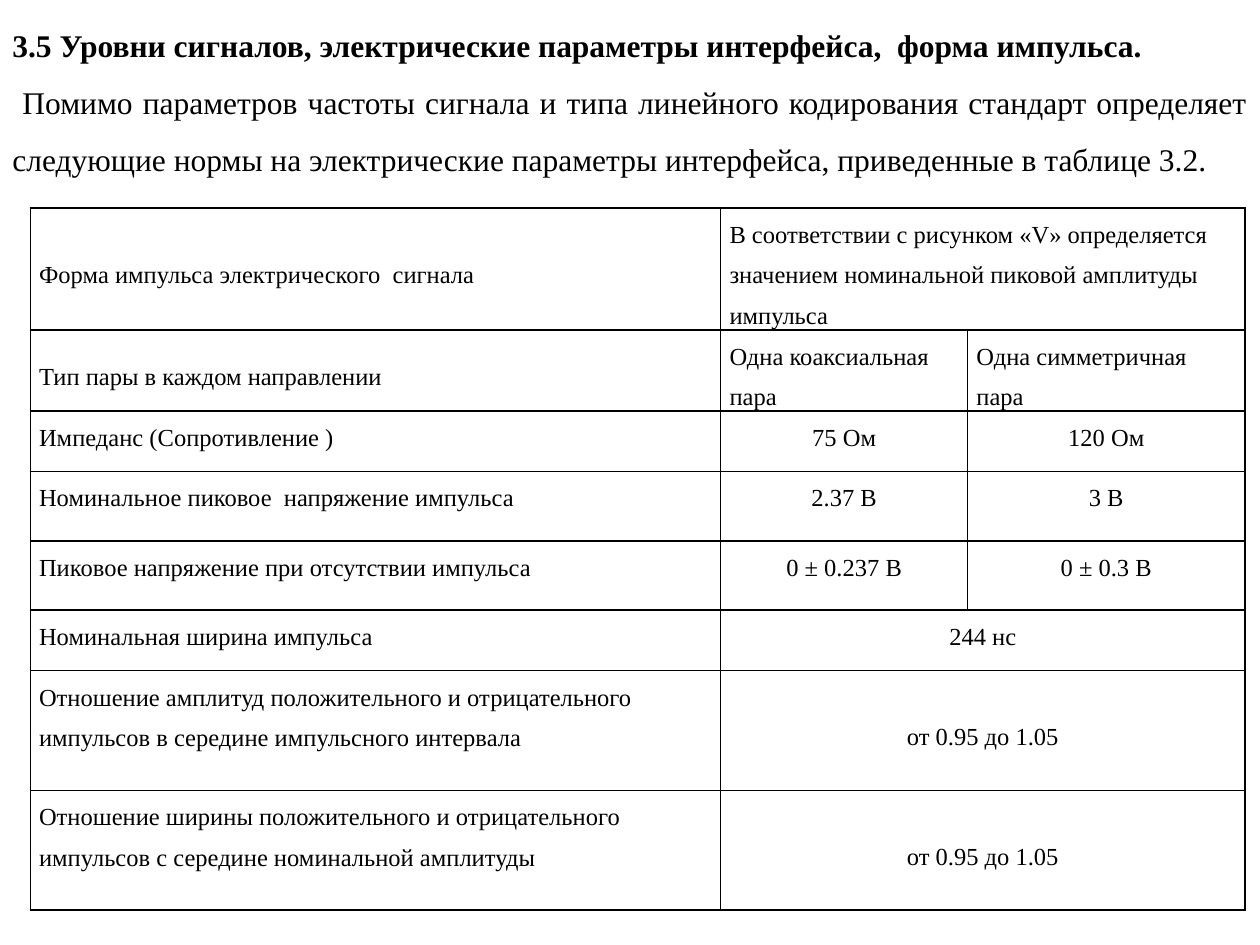
from dataclasses import dataclass

from lxml import etree
from pptx import Presentation
from pptx.dml.color import RGBColor
from pptx.enum.text import MSO_ANCHOR, PP_ALIGN
from pptx.oxml.ns import qn
from pptx.util import Inches, Pt

LEFT, CENTER, JUSTIFY = PP_ALIGN.LEFT, PP_ALIGN.CENTER, PP_ALIGN.JUSTIFY
TOP, MIDDLE = MSO_ANCHOR.TOP, MSO_ANCHOR.MIDDLE


@dataclass(frozen=True)
class Theme:
    """Colours, type and line values of the slide."""
    font: str = "Times New Roman"
    ink: str = "000000"
    body: int = 18
    cell: int = 14
    leading: float = 1.5
    border: int = 1


THEME = Theme()
WIDTH, HEIGHT = Inches(10), Inches(7.5)
COLUMNS = (5.48, 1.96, 2.2)
ROWS = (0.87, 0.54, 0.48, 0.55, 0.55, 0.48, 0.95, 0.95)

HEADING = "3.5 Уровни сигналов, электрические параметры интерфейса,  форма импульса."
INTRO = ("Помимо параметров частоты сигнала и типа линейного кодирования стандарт "
         "определяет следующие нормы на электрические параметры интерфейса, "
         "приведенные в таблице 3.2.")

PARAMETERS = (
    (("Форма импульса электрического  сигнала", JUSTIFY, MIDDLE),
     ("В соответствии с рисунком «V» определяется значением номинальной "
      "пиковой амплитуды импульса", LEFT, MIDDLE)),
    (("Тип пары в каждом направлении", LEFT, MIDDLE),
     ("Одна коаксиальная пара", LEFT, TOP),
     ("Одна симметричная пара", LEFT, TOP)),
    (("Импеданс (Сопротивление )", JUSTIFY, TOP),
     ("75 Ом", CENTER, TOP), ("120 Ом", CENTER, TOP)),
    (("Номинальное пиковое  напряжение импульса", LEFT, TOP),
     ("2.37 В", CENTER, TOP), ("3 В", CENTER, TOP)),
    (("Пиковое напряжение при отсутствии импульса", LEFT, TOP),
     ("0 ± 0.237 В", CENTER, TOP), ("0 ± 0.3 В", CENTER, TOP)),
    (("Номинальная ширина импульса", JUSTIFY, TOP), ("244 нс", CENTER, TOP)),
    (("Отношение амплитуд положительного и отрицательного импульсов в середине "
      "импульсного интервала", LEFT, TOP), ("от 0.95 до 1.05", CENTER, MIDDLE)),
    (("Отношение ширины положительного и отрицательного импульсов с середине "
      "номинальной амплитуды", LEFT, TOP), ("от 0.95 до 1.05", CENTER, MIDDLE)),
)


def apply(target, values):
    """Set each named value on the target."""
    for name, value in values.items():
        setattr(target, name, value)


def write(p, text, size, align, bold=False):
    """Write one formatted run into a paragraph."""
    apply(p, {"alignment": align, "line_spacing": THEME.leading})
    r = p.add_run()
    r.text = text
    apply(r.font, {"name": THEME.font, "size": Pt(size), "bold": bold})
    r.font.color.rgb = RGBColor.from_string(THEME.ink)


def add_borders(cell):
    """Draw a solid line on all four sides of a cell."""
    tcPr = cell._tc.get_or_add_tcPr()
    for i, side in enumerate(("lnL", "lnR", "lnT", "lnB")):
        ln = etree.Element(qn(f"a:{side}"), w=str(Pt(THEME.border)))
        fill = etree.SubElement(ln, qn("a:solidFill"))
        etree.SubElement(fill, qn("a:srgbClr"), val=THEME.ink)
        tcPr.insert(i, ln)


def add_intro(s, x, y, w, h):
    """Place the heading and the justified paragraph in the given box."""
    tf = s.shapes.add_textbox(x, y, w, h).text_frame
    tf.word_wrap = True
    write(tf.paragraphs[0], HEADING, THEME.body, LEFT, bold=True)
    p = tf.add_paragraph()
    write(p, INTRO, THEME.body, JUSTIFY)
    p._p.get_or_add_pPr().set("indent", str(Inches(0.08)))


def add_parameters(s, x, y, w, h):
    """Place the table of interface parameters in the given box."""
    table = s.shapes.add_table(len(ROWS), len(COLUMNS), x, y, w, h).table
    apply(table, {"first_row": False, "horz_banding": False})
    for column, share in zip(table.columns, COLUMNS):
        column.width = int(w * share / sum(COLUMNS))
    for row, share in zip(table.rows, ROWS):
        row.height = int(h * share / sum(ROWS))
    for i, values in enumerate(PARAMETERS):
        if len(values) < len(COLUMNS):
            table.cell(i, 1).merge(table.cell(i, 2))
        for j, (text, align, anchor) in enumerate(values):
            cell = table.cell(i, j)
            apply(cell, {"vertical_anchor": anchor,
                         "margin_left": Inches(0.07), "margin_right": Inches(0.07),
                         "margin_top": 0, "margin_bottom": 0})
            write(cell.text_frame.paragraphs[0], text, THEME.cell, align)
    for cell in table.iter_cells():
        cell.fill.background()
        add_borders(cell)


def main():
    """Build and save the slide."""
    prs = Presentation()
    apply(prs, {"slide_width": WIDTH, "slide_height": HEIGHT})
    s = prs.slides.add_slide(prs.slide_layouts[6])
    add_parameters(s, int(WIDTH * 0.024), int(HEIGHT * 0.22),
                   Inches(sum(COLUMNS)), Inches(sum(ROWS)))
    add_intro(s, 0, Inches(0.01), WIDTH, Inches(1.46))
    prs.save("out.pptx")


if __name__ == "__main__":
    main()
